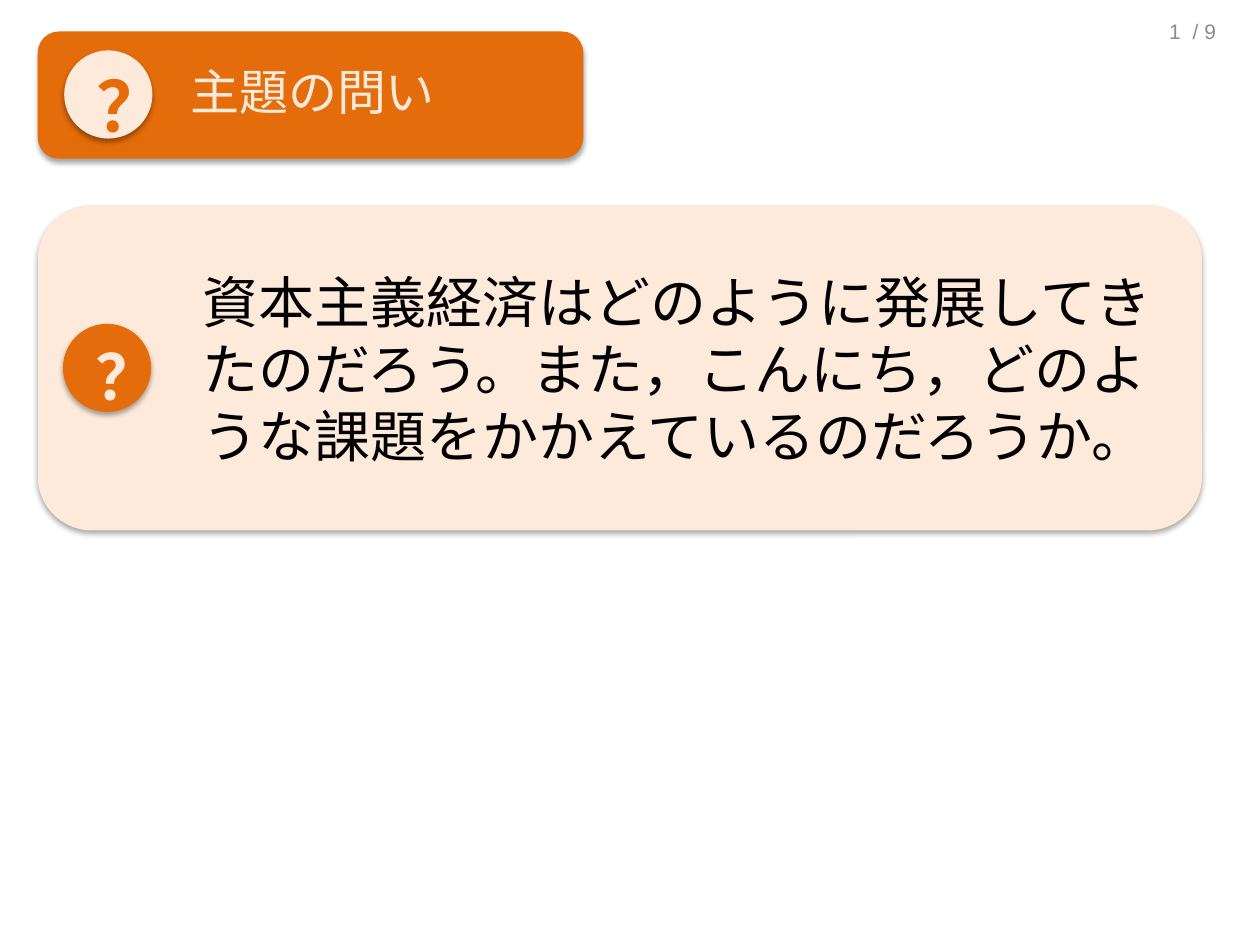
"""Build the theme question slide: a heading bar above a question panel."""
from lxml import etree
from pptx import Presentation
from pptx.dml.color import RGBColor
from pptx.enum.shapes import MSO_SHAPE
from pptx.enum.text import MSO_ANCHOR, MSO_AUTO_SIZE, PP_ALIGN
from pptx.oxml import parse_xml
from pptx.oxml.ns import nsdecls, qn
from pptx.util import Inches, Pt

ROUNDED, OVAL = MSO_SHAPE.ROUNDED_RECTANGLE, MSO_SHAPE.OVAL
TOP, MIDDLE = MSO_ANCHOR.TOP, MSO_ANCHOR.MIDDLE
LEFT, RIGHT = PP_ALIGN.LEFT, PP_ALIGN.RIGHT
NO_FIT = MSO_AUTO_SIZE.NONE

ORANGE = RGBColor(0xE4, 0x6C, 0x0A)
CREAM = RGBColor(0xFD, 0xEA, 0xDA)
BLACK = RGBColor(0, 0, 0)
GRAY = RGBColor(0x8C, 0x8C, 0x8C)
SANS = "Noto Sans CJK JP"

HEADING = "主題の問い"
QUESTION = ("資本主義経済はどのように発展してきたのだろう。"
            "また，こんにち，どのような課題をかかえているのだろうか。")
PAGE_NUMBERS = [("1", (7.14, 0.12, 2.33, 0.26)), ("/ 9", (7.42, 0.11, 2.33, 0.27))]
HEADING_BAR = (0.3, 0.25, 4.33, 1.01)
HEADING_PLACE = (1.41, 0.44, 3, 0.63)
QUESTION_PANEL = (0.3, 1.63, 9.24, 2.58)
HEADING_BADGE = {"disc": (0.51, 0.4, 0.7, 0.7), "mark": (0.67, 0.39, 0.37, 0.75),
                 "fill": CREAM, "color": ORANGE, "size": 40}
QUESTION_BADGE = {"disc": (0.5, 2.57, 0.7, 0.7), "mark": (0.66, 2.54, 0.37, 0.75),
                  "fill": ORANGE, "color": CREAM, "size": 36}
SHADOW = (f'<a:effectLst {nsdecls("a")}><a:outerShdw blurRad="{Pt(3.1)}" '
          f'dist="{Pt(1.8)}" dir="5400000" rotWithShape="0"><a:srgbClr val="000000">'
          '<a:alpha val="35000"/></a:srgbClr></a:outerShdw></a:effectLst>')


def inches(place):
    return [Inches(value) for value in place]


def write(box, text, size, color, font=SANS, bold=False, align=LEFT, spacing=1.0,
          **frame_format):
    frame = box.text_frame
    settings = {"auto_size": NO_FIT, "word_wrap": True, "vertical_anchor": MIDDLE}
    for name, value in (settings | frame_format).items():
        setattr(frame, name, value)
    para = frame.paragraphs[0]
    para.alignment, para.line_spacing = align, spacing
    span = para.add_run()
    span.text = text
    for name, value in {"name": font, "size": Pt(size), "bold": bold}.items():
        setattr(span.font, name, value)
    span.font.color.rgb = color
    etree.SubElement(span.font._element, qn("a:ea"), typeface=font)


def add_panel(shapes, kind, place, fill):
    panel = shapes.add_shape(kind, *inches(place))
    panel.fill.solid()
    panel.fill.fore_color.rgb = fill
    panel.line.fill.background()
    panel._element.spPr.append(parse_xml(SHADOW))
    return panel


def add_badge(shapes, badge):
    add_panel(shapes, OVAL, badge["disc"], badge["fill"])
    write(shapes.add_textbox(*inches(badge["mark"])), "？", badge["size"],
          badge["color"], font="Montserrat", bold=True, spacing=1.2, word_wrap=False)


def main():
    deck = Presentation()
    deck.slide_width, deck.slide_height = Inches(10), Inches(7.5)
    page = deck.slides.add_slide(deck.slide_layouts[5])
    shapes = page.shapes

    for text, place in PAGE_NUMBERS:
        write(shapes.add_textbox(*inches(place)), text, 12, GRAY, font="Arial", align=RIGHT)

    add_panel(shapes, ROUNDED, HEADING_BAR, ORANGE)
    add_badge(shapes, HEADING_BADGE)
    panel = add_panel(shapes, ROUNDED, QUESTION_PANEL, CREAM)
    edge = Inches(0.2)
    write(panel, QUESTION, 32, BLACK, margin_left=Inches(1.18), margin_right=edge,
          margin_top=edge, margin_bottom=edge)

    title = shapes.title
    title.left, title.top, title.width, title.height = inches(HEADING_PLACE)
    write(title, HEADING, 28, CREAM, vertical_anchor=TOP)
    shapes._spTree.append(title._element)

    add_badge(shapes.add_group_shape().shapes, QUESTION_BADGE)
    deck.save("out.pptx")


if __name__ == "__main__":
    main()
